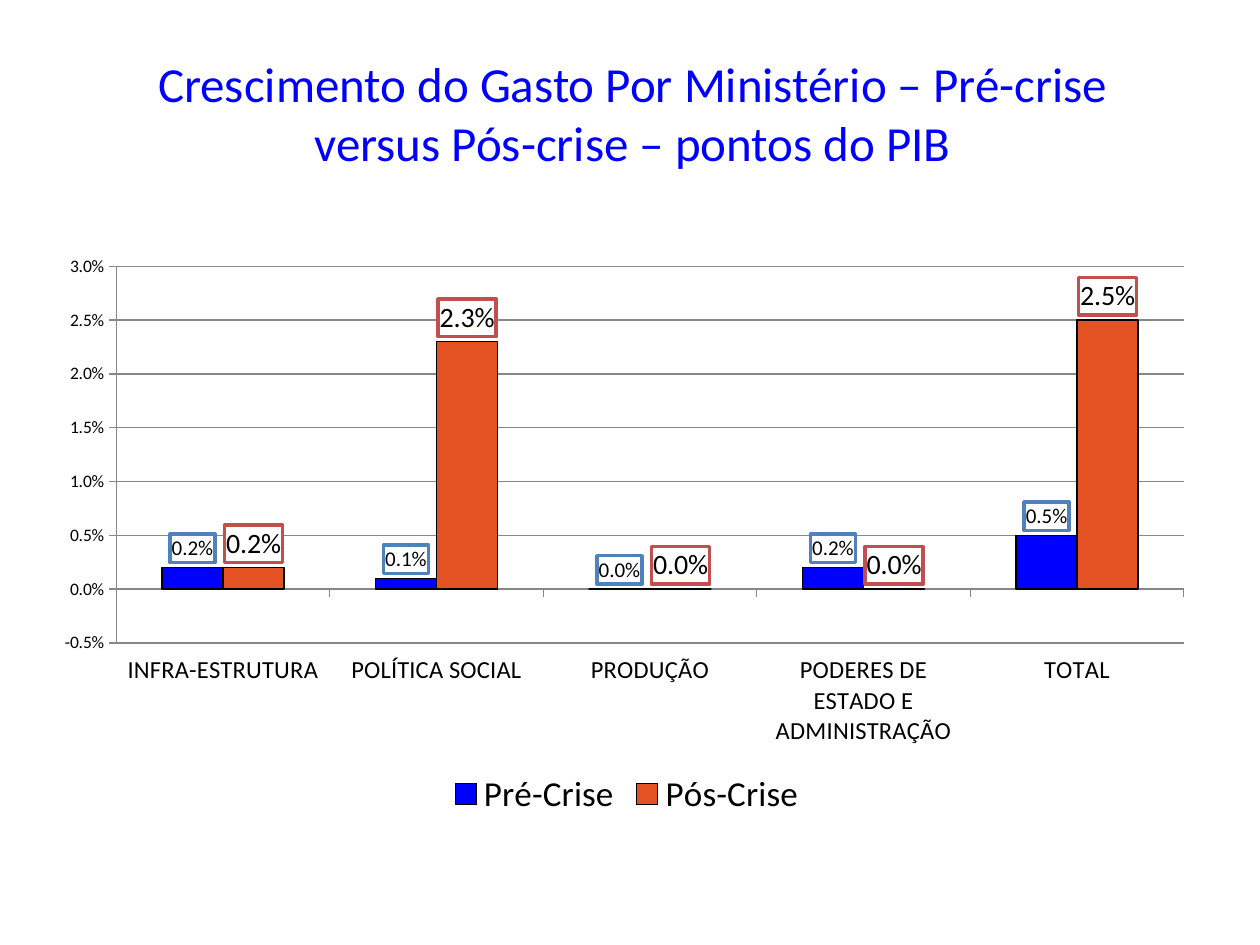
from lxml import etree
from pptx import Presentation
from pptx.chart.data import CategoryChartData
from pptx.dml.color import RGBColor
from pptx.enum.chart import (XL_CHART_TYPE, XL_LABEL_POSITION, XL_LEGEND_POSITION,
                             XL_TICK_LABEL_POSITION, XL_TICK_MARK)
from pptx.enum.text import MSO_ANCHOR, MSO_AUTO_SIZE, PP_ALIGN
from pptx.oxml import parse_xml
from pptx.oxml.ns import nsdecls, qn
from pptx.util import Inches, Pt

COLUMNS = XL_CHART_TYPE.COLUMN_CLUSTERED
OUTSIDE_END = XL_LABEL_POSITION.OUTSIDE_END
BOTTOM = XL_LEGEND_POSITION.BOTTOM
LOW = XL_TICK_LABEL_POSITION.LOW
TICK_OUTSIDE = XL_TICK_MARK.OUTSIDE
TICK_NONE = XL_TICK_MARK.NONE

FONT = "Calibri"
PERCENT = "0.0%"
COLORS = {
    "title": "0000FF", "text": "000000", "grid": "878787", "label_fill": "FFFFFF",
    "pre": "0000FF", "post": "E45223", "pre_box": "4F81BD", "post_box": "C0504D",
}
CATEGORIES = ["INFRA-ESTRUTURA", "POLÍTICA SOCIAL", "PRODUÇÃO",
              "PODERES DE ESTADO E ADMINISTRAÇÃO", "TOTAL"]
# name, values, bar colour, label border colour, label size
SERIES = [
    ("Pré-Crise", (0.002, 0.001, 0, 0.002, 0.005), "pre", "pre_box", 12),
    ("Pós-Crise", (0.002, 0.023, 0, 0, 0.025), "post", "post_box", 16),
]
PLOT_AREA = {"x": 0.06, "y": 0.04, "w": 0.92, "h": 0.65}


def color(name):
    return RGBColor.from_string(COLORS[name])


def set_font(font, size, color_name="text"):
    font.name = FONT
    font.size = Pt(size)
    font.bold = False
    font.color.rgb = color(color_name)


presentation = Presentation()
presentation.slide_width = Inches(10)
presentation.slide_height = Inches(7.5)
slide = presentation.slides.add_slide(presentation.slide_layouts[5])

title = slide.shapes.title
title.left, title.top = Inches(0.82), Inches(0.37)
title.width, title.height = Inches(8.4), Inches(1.04)
title_frame = title.text_frame
title_frame.text = "Crescimento do Gasto Por Ministério – Pré-crise versus Pós-crise – pontos do PIB"
title_frame.word_wrap = True
title_frame.auto_size = MSO_AUTO_SIZE.SHAPE_TO_FIT_TEXT
title_frame.vertical_anchor = MSO_ANCHOR.MIDDLE
title_paragraph = title_frame.paragraphs[0]
title_paragraph.alignment = PP_ALIGN.CENTER
set_font(title_paragraph.runs[0].font, 28, "title")

chart_data = CategoryChartData(number_format=PERCENT)
chart_data.categories = CATEGORIES
for name, values, *_ in SERIES:
    chart_data.add_series(name, values)
chart = slide.shapes.add_chart(
    COLUMNS, Inches(0.37), Inches(1.93), Inches(9.21), Inches(4.6), chart_data).chart
set_font(chart.font, 10)
chart.has_title = False
chart.has_legend = True
chart.legend.position = BOTTOM
chart.legend.include_in_layout = False
set_font(chart.legend.font, 20)

category_axis, value_axis = chart.category_axis, chart.value_axis
category_axis.tick_label_position = LOW
set_font(category_axis.tick_labels.font, 14)
value_axis.minimum_scale = -0.005
value_axis.maximum_scale = 0.03
value_axis.major_unit = 0.005
value_axis.has_major_gridlines = True
value_axis.tick_labels.number_format = PERCENT
value_axis.tick_labels.number_format_is_linked = False
set_font(value_axis.tick_labels.font, 10)
for axis in (category_axis, value_axis):
    axis.major_tick_mark = TICK_OUTSIDE
    axis.minor_tick_mark = TICK_NONE
for line in (category_axis.format.line, value_axis.format.line,
             value_axis.major_gridlines.format.line):
    line.color.rgb = color("grid")
    line.width = Pt(0.75)

plot = chart.plots[0]
plot.gap_width = 150
plot.overlap = 0
plot.vary_by_categories = False
for series, (_, _, fill_name, box_name, label_size) in zip(plot.series, SERIES):
    series.invert_if_negative = False
    series.format.fill.solid()
    series.format.fill.fore_color.rgb = color(fill_name)
    series.format.line.color.rgb = color("text")
    series.format.line.width = Pt(0.75)
    labels = series.data_labels
    labels.show_value = True
    labels.position = OUTSIDE_END
    labels.number_format = PERCENT
    labels.number_format_is_linked = False
    set_font(labels.font, label_size)
    label_box = parse_xml(
        f'<c:spPr {nsdecls("c", "a")}>'
        f'<a:solidFill><a:srgbClr val="{COLORS["label_fill"]}"/></a:solidFill>'
        f'<a:ln w="{Pt(2)}"><a:solidFill><a:srgbClr val="{COLORS[box_name]}"/></a:solidFill></a:ln>'
        '</c:spPr>')
    series._element.find(qn("c:dLbls")).find(qn("c:numFmt")).addnext(label_box)

plot_area = chart._chartSpace.chart.plotArea
for old_layout in plot_area.findall(qn("c:layout")):
    plot_area.remove(old_layout)
layout = etree.Element(qn("c:layout"))
manual = etree.SubElement(layout, qn("c:manualLayout"))
settings = {"layoutTarget": "inner", "xMode": "edge", "yMode": "edge", **PLOT_AREA}
for tag, value in settings.items():
    etree.SubElement(manual, qn(f"c:{tag}")).set("val", str(value))
plot_area.insert(0, layout)

presentation.save("out.pptx")
